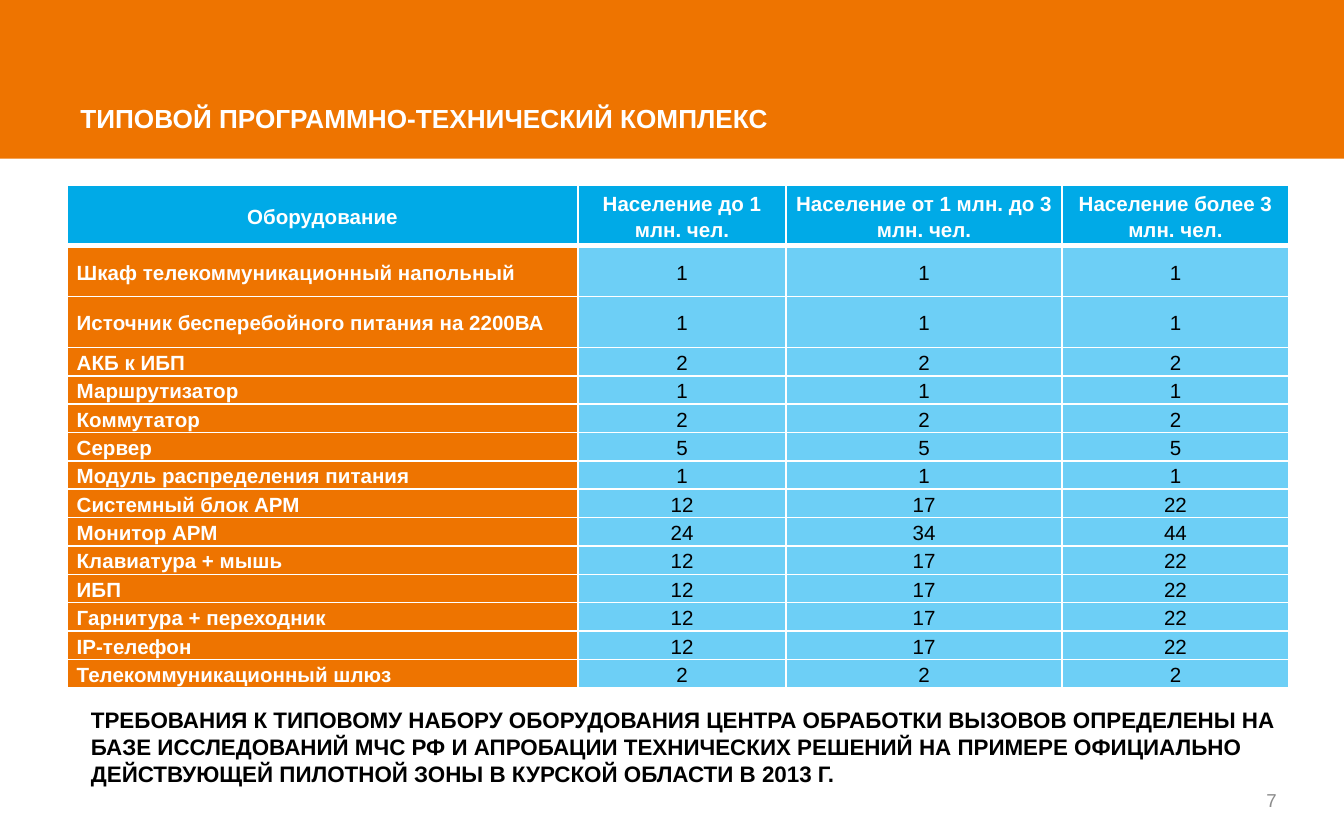
from dataclasses import dataclass
from lxml import etree
from pptx import Presentation
from pptx import util as u
from pptx.dml.color import RGBColor
from pptx.enum import shapes, text
from pptx.oxml import ns


@dataclass(frozen=True)
class Theme:
    font: str = "Arial"
    orange: str = "EE7400"
    blue: str = "00AAE7"
    sky: str = "6DCFF6"
    white: str = "FFFFFF"
    black: str = "000000"
    gray: str = "8C8C8C"
    title: int = 14
    note: int = 12
    body: int = 11
    page: int = 10


THEME = Theme()
LEFT, MID, RIGHT = text.PP_ALIGN.LEFT, text.PP_ALIGN.CENTER, text.PP_ALIGN.RIGHT
TOP, HALF = text.MSO_ANCHOR.TOP, text.MSO_ANCHOR.MIDDLE

COLS = [9.65, 3.94, 5.21, 4.29]
HEADS = [
    "Оборудование",
    "Население до 1 млн. чел.",
    "Население от 1 млн. до 3 млн. чел.",
    "Население более 3 млн. чел.",
]
ITEMS = [
    ("Шкаф телекоммуникационный напольный", 1, 1, 1),
    ("Источник бесперебойного питания на 2200ВА", 1, 1, 1),
    ("АКБ к ИБП", 2, 2, 2),
    ("Маршрутизатор", 1, 1, 1),
    ("Коммутатор", 2, 2, 2),
    ("Сервер", 5, 5, 5),
    ("Модуль распределения питания", 1, 1, 1),
    ("Системный блок АРМ", 12, 17, 22),
    ("Монитор АРМ", 24, 34, 44),
    ("Клавиатура + мышь", 12, 17, 22),
    ("ИБП", 12, 17, 22),
    ("Гарнитура + переходник", 12, 17, 22),
    ("IP-телефон", 12, 17, 22),
    ("Телекоммуникационный шлюз", 2, 2, 2),
]
ROWS = [1.14] + [0.96] * 2 + [0.5] * (len(ITEMS) - 2)
NOTE = (
    "ТРЕБОВАНИЯ К ТИПОВОМУ НАБОРУ ОБОРУДОВАНИЯ ЦЕНТРА ОБРАБОТКИ ВЫЗОВОВ "
    "ОПРЕДЕЛЕНЫ НА БАЗЕ ИССЛЕДОВАНИЙ МЧС РФ И АПРОБАЦИИ ТЕХНИЧЕСКИХ РЕШЕНИЙ "
    "НА ПРИМЕРЕ ОФИЦИАЛЬНО ДЕЙСТВУЮЩЕЙ ПИЛОТНОЙ ЗОНЫ В КУРСКОЙ ОБЛАСТИ В 2013 Г."
)


def write(frame, words, size, color, bold=True, align=LEFT, line=None, after=0):
    para = frame.paragraphs[0]
    para.alignment = align
    para.line_spacing = line
    para.space_after = u.Pt(after)
    run = para.add_run()
    run.text = words
    run.font.name = THEME.font
    run.font.size = u.Pt(size)
    run.font.bold = bold
    run.font.color.rgb = RGBColor.from_string(color)


def label(slide, box, words, anchor=TOP, inset=None, **form):
    frame = slide.shapes.add_textbox(*map(u.Cm, box)).text_frame
    frame.word_wrap = True
    frame.vertical_anchor = anchor
    if inset is not None:
        frame.margin_left = frame.margin_right = u.Cm(inset)
        frame.margin_top = frame.margin_bottom = u.Cm(inset)
    write(frame, words, **form)


def border(cell, top, base):
    props = cell._tc.get_or_add_tcPr()
    sides = {"lnL": 1, "lnR": 1, "lnT": top, "lnB": base}
    for spot, (side, width) in enumerate(sides.items()):
        edge = etree.Element(ns.qn(f"a:{side}"), w=str(u.Pt(width)))
        fill = etree.SubElement(edge, ns.qn("a:solidFill"))
        etree.SubElement(fill, ns.qn("a:srgbClr"), val=THEME.white)
        props.insert(spot, edge)


def header(slide, box):
    left, top, width, height = box
    band = slide.shapes.add_shape(shapes.MSO_SHAPE.RECTANGLE, *map(u.Cm, box))
    band.shadow.inherit = False
    band.fill.solid()
    band.fill.fore_color.rgb = RGBColor.from_string(THEME.orange)
    band.line.fill.background()
    label(slide, (left + 1.27, top + 1.8, width - 5.92, 0.86),
          "ТИПОВОЙ ПРОГРАММНО-ТЕХНИЧЕСКИЙ КОМПЛЕКС", anchor=HALF,
          size=THEME.title, color=THEME.white, after=6)


def grid(slide, box):
    data = [HEADS] + ITEMS
    table = slide.shapes.add_table(len(ROWS), len(COLS), *map(u.Cm, box)).table
    table.horz_banding = False
    for col, width in zip(table.columns, COLS):
        col.width = u.Cm(width)
    for r, (row, height) in enumerate(zip(table.rows, ROWS)):
        row.height = u.Cm(height)
        for c, cell in enumerate(row.cells):
            head, name = r == 0, c == 0
            fill = THEME.blue if head else THEME.orange if name else THEME.sky
            cell.fill.solid()
            cell.fill.fore_color.rgb = RGBColor.from_string(fill)
            cell.vertical_anchor = HALF
            cell.margin_left = cell.margin_right = u.Cm(0.18)
            cell.margin_top = cell.margin_bottom = 0
            border(cell, 3 if r == 1 else 1, 3 if head else 1)
            write(cell.text_frame, str(data[r][c]), THEME.body,
                  THEME.white if head or name else THEME.black,
                  bold=head or name, line=1.15,
                  align=LEFT if name and not head else MID)


def footer(slide, box):
    left, top, width, height = box
    label(slide, (left, top, width, 1.9), NOTE,
          size=THEME.note, color=THEME.black, after=6)
    label(slide, (left + width - 6.55, top + height - 0.84, 5.92, 0.84), "7",
          anchor=HALF, inset=0, size=THEME.page, color=THEME.gray,
          bold=False, align=RIGHT)


def main():
    deck = Presentation()
    deck.slide_width, deck.slide_height = u.Cm(25.4), u.Cm(15.88)
    slide = deck.slides.add_slide(deck.slide_layouts[6])
    header(slide, (0, 0, 25.4, 3))
    grid(slide, (1.27, 3.51, sum(COLS), sum(ROWS)))
    footer(slide, (1.47, 13.23, 23.29, 2.32))
    deck.save("out.pptx")


if __name__ == "__main__":
    main()
